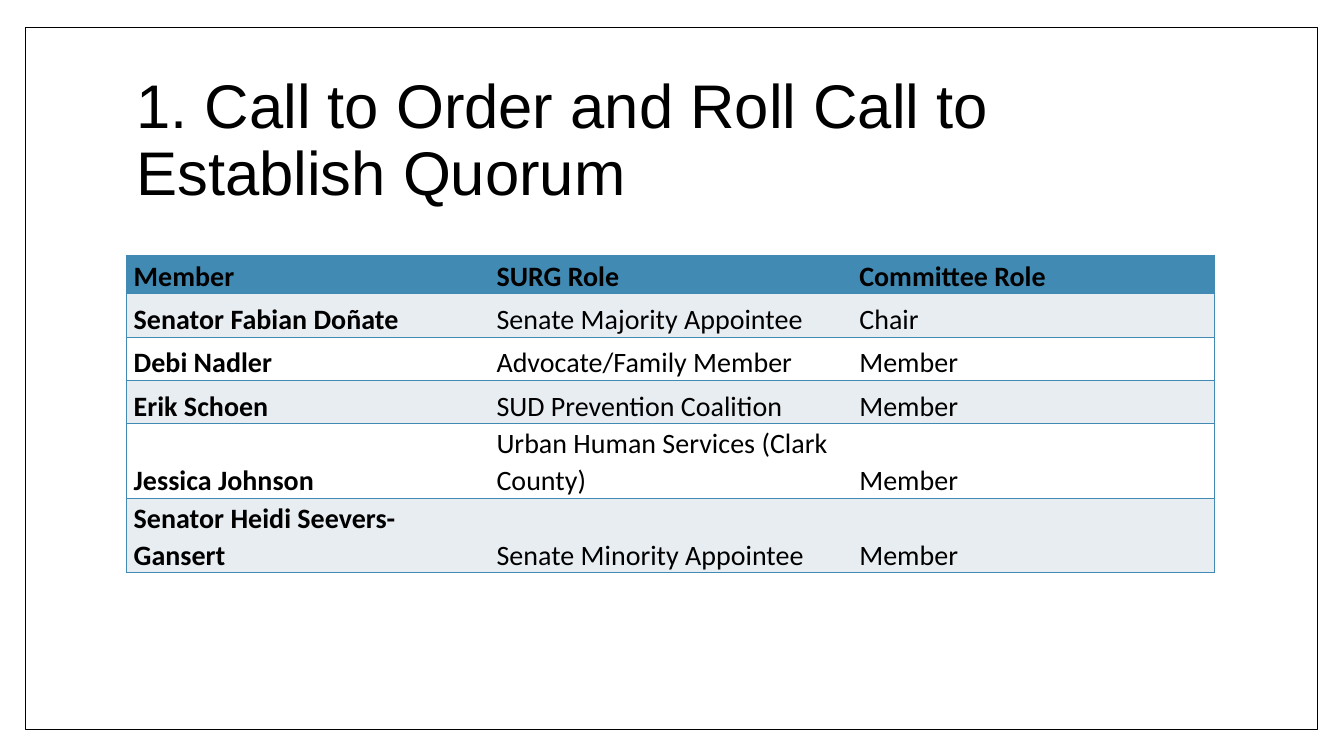
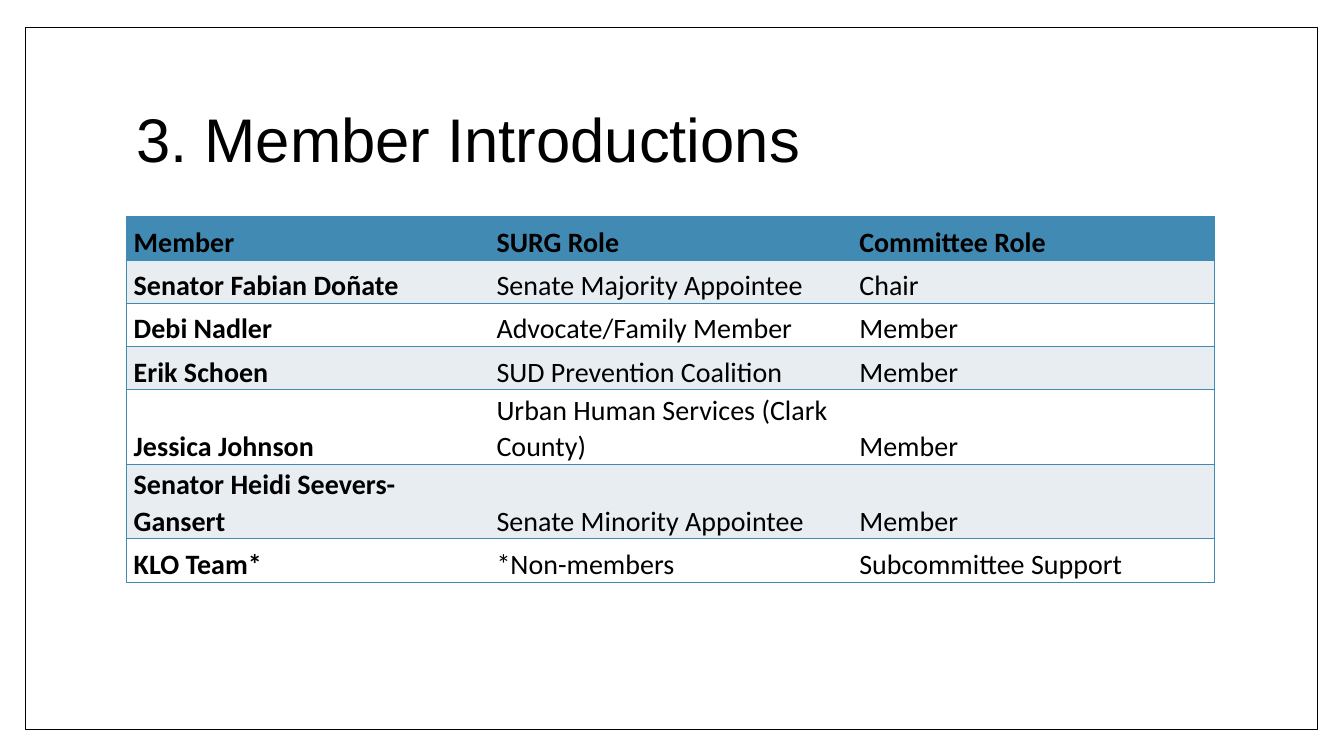
from lxml.etree import SubElement
from pptx import Presentation
from pptx.dml.color import RGBColor
from pptx.enum.shapes import MSO_SHAPE
from pptx.enum.text import MSO_ANCHOR, MSO_AUTO_SIZE, PP_ALIGN
from pptx.oxml.ns import qn
from pptx.util import Cm, Pt

# Content
HEAD = ("Member", "SURG Role", "Committee Role")
TEAM = [
    ("Senator Fabian Doñate", "Senate Majority Appointee", "Chair"),
    ("Debi Nadler", "Advocate/Family Member", "Member"),
    ("Erik Schoen", "SUD Prevention Coalition", "Member"),
    ("Jessica Johnson", "Urban Human Services (Clark County)", "Member"),
    ("Senator Heidi Seevers-Gansert", "Senate Minority Appointee", "Member"),
]
STAFF = ("KLO Team*", "*Non-members", "Subcommittee Support")

# Title, rows, table top and header height in cm
PAGES = [
    ("1. Call to Order and Roll Call to Establish Quorum", [HEAD, *TEAM], 6.45, 0.95),
    ("3. Member Introductions", [HEAD, *TEAM, STAFF], 5.46, 1.09),
]

# Shared style
BLUE, PALE, WHITE, BLACK = "418AB3", "E8EDF2", "FFFFFF", "000000"
LEFT, WIDTH, ROW = 3.18, 27.43, 1.09
FRAME = (0.64, 0.69, 32.56, 17.7)
TITLE = {"left": Cm(LEFT), "top": Cm(1.7), "width": Cm(WIDTH), "height": Cm(3.76)}
BODY = {"word_wrap": True, "auto_size": MSO_AUTO_SIZE.NONE,
        "vertical_anchor": MSO_ANCHOR.MIDDLE}
CELL = {"vertical_anchor": MSO_ANCHOR.BOTTOM, "margin_left": Cm(0.19),
        "margin_right": Cm(0.19), "margin_top": Cm(0.03), "margin_bottom": 0}
LINES = {"alignment": PP_ALIGN.LEFT, "line_spacing": 0.9}
ROLE = {"alignment": PP_ALIGN.LEFT, "line_spacing": 1.07, "space_after": Pt(8)}


def color(code):
    return RGBColor.from_string(code)


def apply(item, style):
    for name, value in style.items():
        setattr(item, name, value)


def paint(fill, code):
    fill.solid()
    fill.fore_color.rgb = color(code)


def write(frame, text, style, font):
    frame.text = text
    para = frame.paragraphs[0]
    apply(para, style)
    run = para.runs[0]
    apply(run.font, font)
    run.font.color.rgb = color(BLACK)


def border(cell, sides):
    """Draw the named sides in blue and clear the others."""
    props = cell._tc.get_or_add_tcPr()
    for spot, side in enumerate("LRTB"):
        line = SubElement(props, qn("a:ln" + side), w=str(Pt(1)))
        if side in sides:
            fill = SubElement(line, qn("a:solidFill"))
            SubElement(fill, qn("a:srgbClr"), val=BLUE)
        else:
            SubElement(line, qn("a:noFill"))
        props.insert(spot, line)


def add_frame(slide):
    box = slide.shapes.add_shape(MSO_SHAPE.RECTANGLE, *map(Cm, FRAME))
    box.shadow.inherit = False
    paint(box.fill, WHITE)
    box.line.color.rgb = color(BLACK)
    box.line.width = Pt(1)
    # Send the frame behind the title
    slide.shapes._spTree.insert(2, box._element)


def add_title(slide, text):
    title = slide.shapes.title
    apply(title, TITLE)
    apply(title.text_frame, BODY)
    write(title.text_frame, text, LINES, {"name": "Arial", "size": Pt(44)})


def add_roster(slide, rows, top, head):
    count, last = len(rows), len(HEAD) - 1
    high = head + ROW * (count - 1)
    table = slide.shapes.add_table(
        count, len(HEAD), Cm(LEFT), Cm(top), Cm(WIDTH), Cm(high)).table
    for r, row in enumerate(rows):
        table.rows[r].height = Cm(ROW if r else head)
        shade = BLUE if r == 0 else PALE if r % 2 else WHITE
        for c, text in enumerate(row):
            cell = table.cell(r, c)
            apply(cell, CELL)
            paint(cell.fill, shade)
            border(cell, "TB" + "L" * (c == 0) + "R" * (c == last))
            bold = r == 0 or c == 0
            write(cell.text_frame, text, ROLE,
                  {"name": "Calibri", "size": Pt(20), "bold": bold})


def main():
    deck = Presentation()
    deck.slide_width, deck.slide_height = Cm(33.87), Cm(19.05)
    for title, rows, top, head in PAGES:
        slide = deck.slides.add_slide(deck.slide_layouts[5])
        add_frame(slide)
        add_title(slide, title)
        add_roster(slide, rows, top, head)
    deck.save("out.pptx")


if __name__ == "__main__":
    main()
